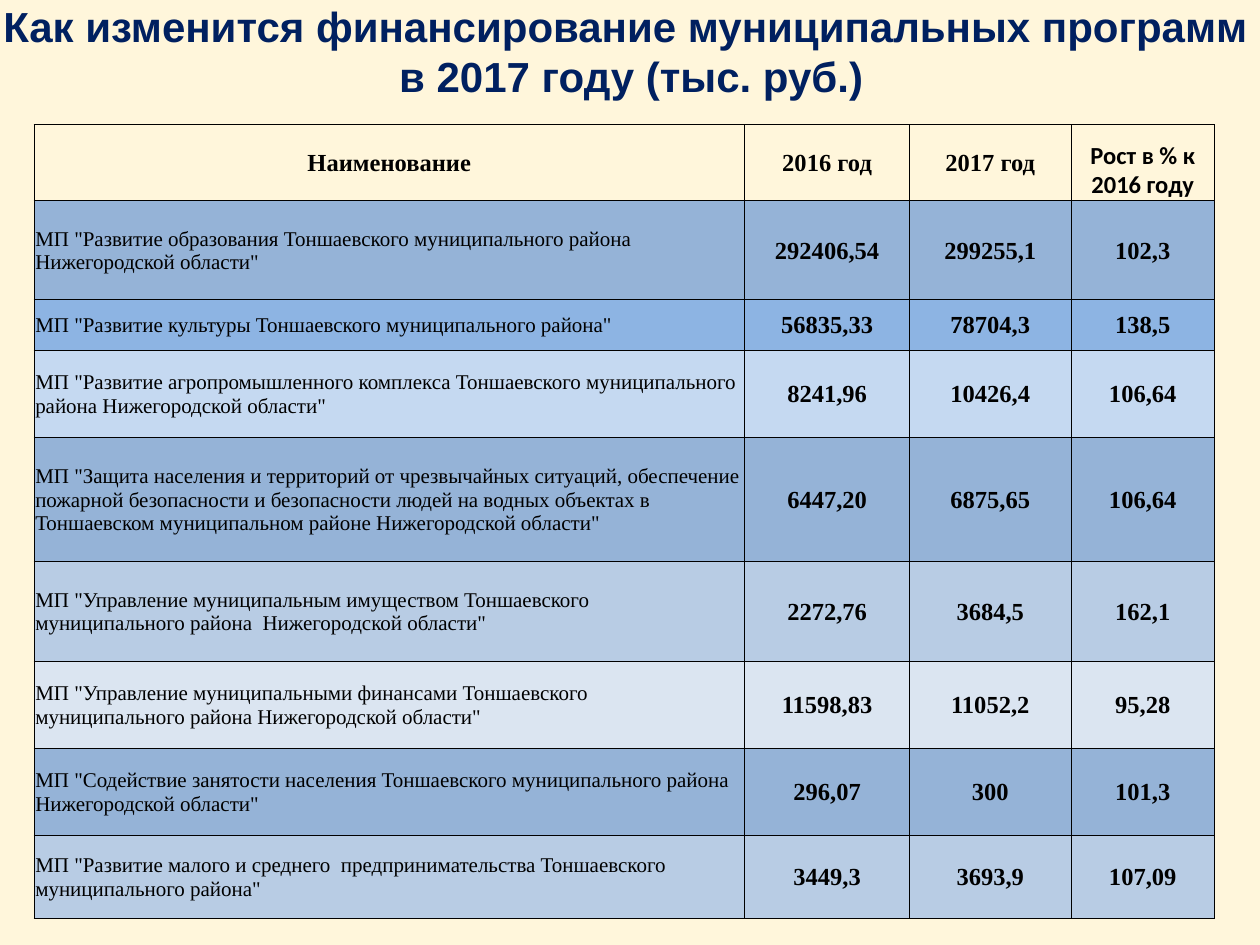
"""Build a slide with a table of municipal programme funding."""
import pptx
import pptx.util
import pptx.dml.color
import pptx.enum.text
import pptx.oxml
import pptx.oxml.ns
from pptx.util import Inches

ALIGN = pptx.enum.text.PP_ALIGN
ANCHOR = pptx.enum.text.MSO_ANCHOR


def tint(code):
    return pptx.dml.color.RGBColor.from_string(code)


def write(frame, text, align, color, **form):
    para = frame.paragraphs[0]
    para.alignment = align
    run = para.add_run()
    run.text = text
    run.font.color.rgb = tint(color)
    for key, value in form.items():
        setattr(run.font, key, value)
    return para


deck = pptx.Presentation()
deck.slide_width, deck.slide_height = Inches(10), Inches(7.5)
slide = deck.slides.add_slide(deck.slide_layouts[6])
back = slide.background.fill
back.solid()
back.fore_color.rgb = tint("FFF6DB")

title = slide.shapes.add_textbox(Inches(-0.04), Inches(0), Inches(10), Inches(0.81))
frame = title.text_frame
bare = {"margin_left": 0, "margin_right": 0, "margin_top": 0, "margin_bottom": 0, "word_wrap": True}
for key, value in bare.items():
    setattr(frame, key, value)
para = write(frame, "Как изменится финансирование муниципальных программ в 2017 году (тыс. руб.)",
             ALIGN.CENTER, "002060", name="Arial", size=pptx.util.Pt(24), bold=True)
props = para._p.get_or_add_pPr()
props.set("marL", str(Inches(0.1)))
props.set("indent", str(Inches(-0.09)))

rows = [
    (0.6, None, "Наименование", "2016 год", "2017 год", "Рост в % к 2016 году"),
    (0.79, "95B3D7", 'МП "Развитие образования Тоншаевского муниципального района Нижегородской области"',
     "292406,54", "299255,1", "102,3"),
    (0.4, "8DB4E3", 'МП "Развитие культуры Тоншаевского муниципального района"',
     "56835,33", "78704,3", "138,5"),
    (0.69, "C5D9F1", 'МП "Развитие агропромышленного комплекса Тоншаевского муниципального района '
     'Нижегородской области"', "8241,96", "10426,4", "106,64"),
    (0.99, "95B3D7", 'МП "Защита населения и территорий от чрезвычайных ситуаций, обеспечение '
     'пожарной безопасности и безопасности людей на водных объектах в Тоншаевском '
     'муниципальном районе Нижегородской области"', "6447,20", "6875,65", "106,64"),
    (0.79, "B8CCE4", 'МП "Управление муниципальным имуществом Тоншаевского муниципального района  '
     'Нижегородской области"', "2272,76", "3684,5", "162,1"),
    (0.69, "DBE5F1", 'МП "Управление муниципальными финансами Тоншаевского муниципального района '
     'Нижегородской области"', "11598,83", "11052,2", "95,28"),
    (0.69, "95B3D7", 'МП "Содействие занятости населения Тоншаевского муниципального района '
     'Нижегородской области"', "296,07", "300", "101,3"),
    (0.66, "B8CCE4", 'МП "Развитие малого и среднего  предпринимательства Тоншаевского '
     'муниципального района"', "3449,3", "3693,9", "107,09"),
]
widths = [5.64, 1.31, 1.28, 1.14]
grid = slide.shapes.add_table(len(rows), len(widths), Inches(0.27), Inches(0.99),
                              Inches(9.37), Inches(6.3)).table
grid.first_row = grid.horz_banding = False
for col, width in zip(grid.columns, widths):
    col.width = Inches(width)

inset = {"margin_left": Inches(0.01), "margin_right": Inches(0.01),
         "margin_top": Inches(0.01), "margin_bottom": 0}
space = pptx.oxml.ns.nsdecls("a")
for i, (height, shade, *texts) in enumerate(rows):
    grid.rows[i].height = Inches(height)
    for j, text in enumerate(texts):
        cell = grid.cell(i, j)
        last = i == 0 and j == 3
        label = i > 0 and j == 0
        look = {**inset, "vertical_anchor": ANCHOR.BOTTOM if last else ANCHOR.MIDDLE}
        for key, value in look.items():
            setattr(cell, key, value)
        write(cell.text_frame, text, ALIGN.LEFT if label else ALIGN.CENTER, "000000",
              name="Calibri" if last else "Times New Roman",
              size=pptx.util.Pt(12 if label else 14), bold=not label)
        edges = cell._tc.get_or_add_tcPr()
        for side in ("lnL", "lnR", "lnT", "lnB"):
            edges.append(pptx.oxml.parse_xml(
                f'<a:{side} {space} w="{pptx.util.Pt(0.5)}"><a:solidFill>'
                f'<a:srgbClr val="000000"/></a:solidFill></a:{side}>'))
        if shade:
            cell.fill.solid()
            cell.fill.fore_color.rgb = tint(shade)
        else:
            cell.fill.background()

deck.save("out.pptx")
